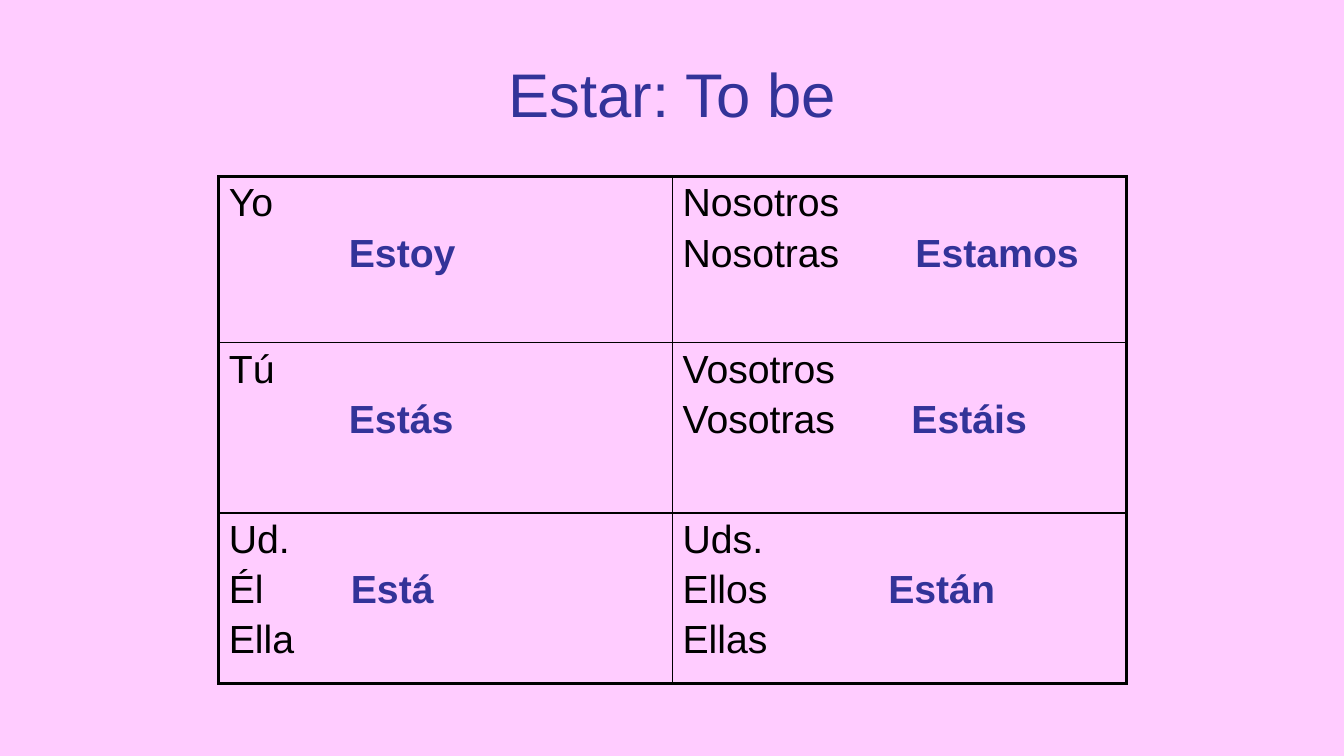
from lxml.etree import SubElement
from pptx import Presentation
from pptx.dml.color import RGBColor
from pptx.enum.text import MSO_ANCHOR, PP_ALIGN
from pptx.oxml.ns import qn
from pptx.util import Inches, Pt

TITLE = "Estar: To be"
# Each cell: pronouns by line, verb form on the second line, verb offset in inches
CONJUGATION = [
    [(["Yo", ""], "Estoy", 1.19), (["Nosotros", "Nosotras"], "Estamos", 2.31)],
    [(["Tú", ""], "Estás", 1.19), (["Vosotros", "Vosotras"], "Estáis", 2.27)],
    [(["Ud.", "Él", "Ella"], "Está", 1.21), (["Uds.", "Ellos", "Ellas"], "Están", 2.04)],
]
VERB_LINE = 1
ROW_HEIGHTS = [1.65, 1.69, 1.69]
COLUMN_WIDTH = 4.5
COLORS = {"background": "FFCCFF", "accent": "333399", "text": "000000"}
FONT = "Arial"
OUTER_LINE, INNER_LINE = 2.25, 1


def format_span(span, size, color, bold=False):
    span.font.name = FONT
    span.font.size = Pt(size)
    span.font.bold = bold
    span.font.color.rgb = RGBColor.from_string(COLORS[color])


def add_tab_stop(para, offset):
    tabs = SubElement(para._p.get_or_add_pPr(), qn("a:tabLst"))
    SubElement(tabs, qn("a:tab"), pos=str(Inches(offset)), algn="l")


def set_borders(cell, widths):
    properties = cell._tc.get_or_add_tcPr()
    for side, width in widths.items():
        line = SubElement(properties, qn(f"a:ln{side}"), w=str(Pt(width)))
        fill = SubElement(line, qn("a:solidFill"))
        SubElement(fill, qn("a:srgbClr"), val=COLORS["text"])


def fill_cell(cell, pronouns, verb, offset):
    frame = cell.text_frame
    for index, pronoun in enumerate(pronouns):
        para = frame.paragraphs[0] if index == 0 else frame.add_paragraph()
        para.space_before = Pt(4.6)
        span = para.add_run()
        span.text = pronoun
        if index == VERB_LINE:
            add_tab_stop(para, offset)
            span.text += "\t"
            verb_span = para.add_run()
            verb_span.text = verb
            format_span(verb_span, 28, "accent", bold=True)
        format_span(span, 28, "text")


# Deck and background
deck = Presentation()
deck.slide_width, deck.slide_height = Inches(13.33), Inches(7.5)
page = deck.slides.add_slide(deck.slide_layouts[5])
page.background.fill.solid()
page.background.fill.fore_color.rgb = RGBColor.from_string(COLORS["background"])

# Title
title = page.shapes.title
title.left, title.top = Inches(0.67), Inches(0.3)
title.width, title.height = Inches(12), Inches(1.25)
title.text_frame.text = TITLE
title.text_frame.vertical_anchor = MSO_ANCHOR.MIDDLE
title_para = title.text_frame.paragraphs[0]
title_para.alignment = PP_ALIGN.CENTER
format_span(title_para.runs[0], 44, "accent")

# Conjugation table
row_count, column_count = len(CONJUGATION), len(CONJUGATION[0])
table = page.shapes.add_table(
    row_count, column_count, Inches(2.17), Inches(1.75),
    Inches(COLUMN_WIDTH * column_count), Inches(sum(ROW_HEIGHTS))).table
table.first_row = table.horz_banding = False
for column in table.columns:
    column.width = Inches(COLUMN_WIDTH)

for r, entries in enumerate(CONJUGATION):
    table.rows[r].height = Inches(ROW_HEIGHTS[r])
    for c, entry in enumerate(entries):
        cell = table.cell(r, c)
        on_edge = {"L": c == 0, "R": c == column_count - 1,
                   "T": r == 0, "B": r == row_count - 1}
        set_borders(cell, {side: OUTER_LINE if edge else INNER_LINE
                           for side, edge in on_edge.items()})
        cell.fill.background()
        fill_cell(cell, *entry)

deck.save("out.pptx")
